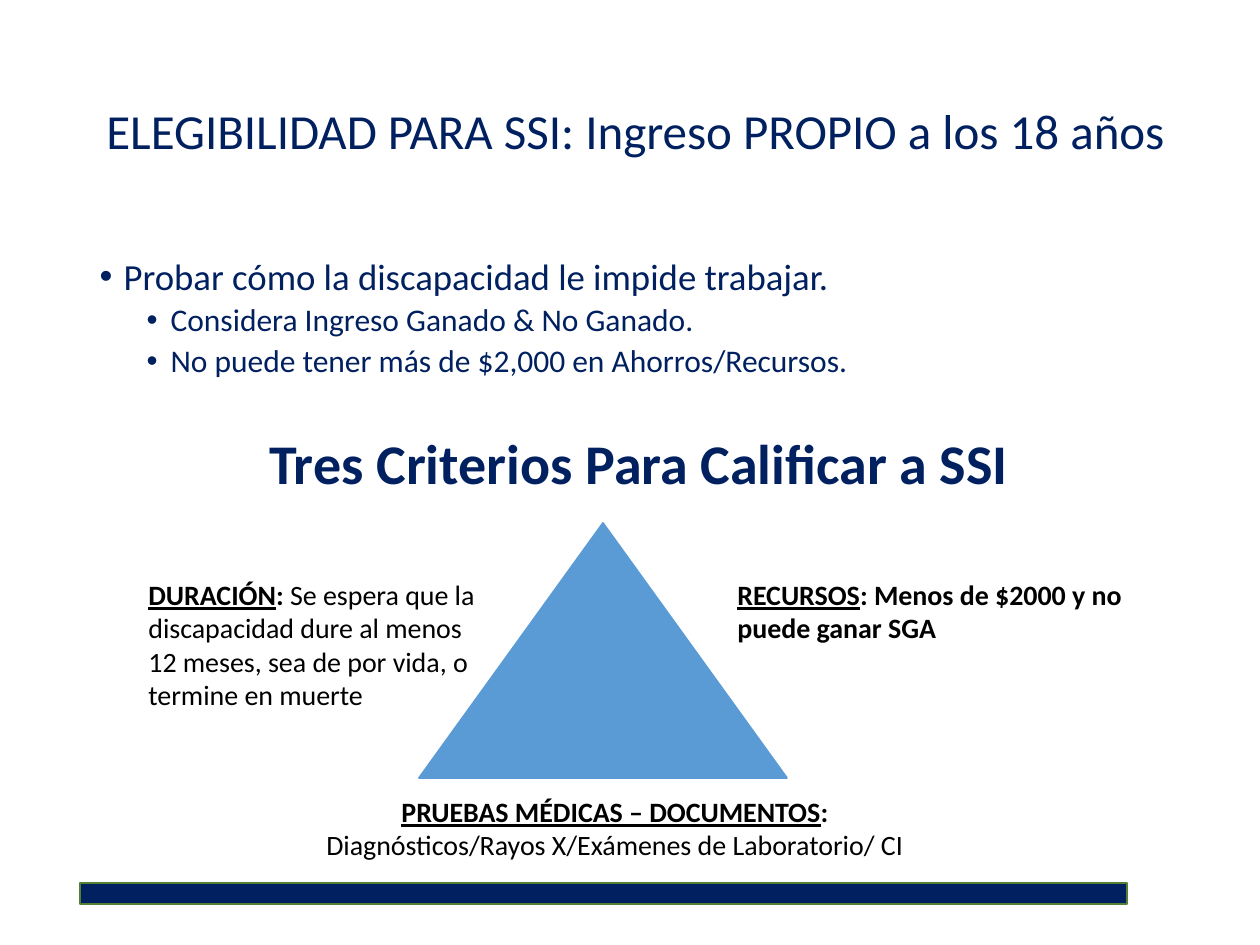
"""Build the slide on SSI eligibility at age 18."""
from lxml.etree import SubElement
from pptx import Presentation
from pptx.dml.color import RGBColor
from pptx.enum.shapes import MSO_SHAPE as SHAPE
from pptx.enum.text import MSO_ANCHOR as ANCHOR, MSO_AUTO_SIZE as AUTO, PP_ALIGN as ALIGN
from pptx.oxml.ns import qn
from pptx.util import Emu, Pt

NAVY, BLACK, BLUE, GREEN = "002060", "000000", "5B9BD5", "538035"
FONT = "Calibri"

TITLE = "ELEGIBILIDAD PARA SSI: Ingreso PROPIO a los 18 años"
TITLE_BOX = (21, 42, 1229, 183)
BODY_BOX = (87, 252, 1086, 600)
BULLETS = [
    (0, "Probar cómo la discapacidad le impide trabajar."),
    (1, "Considera Ingreso Ganado & No Ganado."),
    (1, "No puede tener más de $2,000 en Ahorros/Recursos."),
]
LEVELS = [
    {"size": 21, "before": 7.5, "left": 24},
    {"size": 18, "before": 3.8, "left": 71},
]
HANG = 24

HEADING = "Tres Criterios Para Calificar a SSI"
HEADING_BOX = (113, 430, 1040, 57)
HEADING_INDENT = 12

PLAIN, BOLD, UNDERLINED = (False, False), (True, False), (True, True)
CRITERIA = [
    ((305, 788, 620, 81), ALIGN.CENTER, [
        [("PRUEBAS MÉDICAS – DOCUMENTOS", UNDERLINED), (":", BOLD)],
        [("Diagnósticos/Rayos X/Exámenes de Laboratorio/ CI", PLAIN)],
    ]),
    ((725, 571, 428, 81), ALIGN.LEFT, [
        [("RECURSOS", UNDERLINED), (": Menos de $2000 y no puede ganar SGA", BOLD)],
    ]),
    ((136, 571, 368, 149), ALIGN.LEFT, [
        [("DURACIÓN", UNDERLINED), (": ", BOLD),
         ("Se espera que la discapacidad dure al menos 12 meses, "
          "sea de por vida, o termine en muerte", PLAIN)],
    ]),
]
SHAPES = [
    (SHAPE.ISOSCELES_TRIANGLE, (419, 523, 368, 255), BLUE, BLUE),
    (SHAPE.RECTANGLE, (80, 883, 1047, 21), NAVY, GREEN),
]


def px(n):
    return Emu(round(n * 914400 / 126))


def rgb(value):
    return RGBColor.from_string(value)


def place(sp, box):
    sp.left, sp.top, sp.width, sp.height = map(px, box)


def style(r, size, color, bold=False, underline=False):
    f = r.font
    f.name, f.size, f.bold, f.underline = FONT, Pt(size), bold, underline
    f.color.rgb = rgb(color)


def add_box(s, box):
    tf = s.shapes.add_textbox(*map(px, box)).text_frame
    tf.word_wrap = True
    return tf


def add_title(s):
    sp = s.shapes.title
    place(sp, TITLE_BOX)
    tf = sp.text_frame
    tf.text, tf.vertical_anchor, tf.auto_size = TITLE, ANCHOR.MIDDLE, AUTO.NONE
    p = tf.paragraphs[0]
    p.alignment, p.line_spacing = ALIGN.CENTER, 0.9
    style(p.runs[0], 28, NAVY)


def add_bullets(s):
    sp = s.placeholders[1]
    place(sp, BODY_BOX)
    tf = sp.text_frame
    tf.text = "\n".join(text for _, text in BULLETS)
    tf.vertical_anchor, tf.auto_size = ANCHOR.TOP, AUTO.NONE
    for p, (level, _) in zip(tf.paragraphs, BULLETS):
        look = LEVELS[level]
        p.level, p.line_spacing, p.space_before = level, 0.9, Pt(look["before"])
        pPr = p._p.get_or_add_pPr()
        pPr.set("marL", str(px(look["left"])))
        pPr.set("indent", str(px(-HANG)))
        SubElement(pPr, qn("a:buFont"), typeface="Arial")
        SubElement(pPr, qn("a:buChar"), char="•")
        style(p.runs[0], look["size"], NAVY)


def add_heading(s):
    tf = add_box(s, HEADING_BOX)
    tf.text = HEADING
    tf.margin_left, tf.margin_right = px(HEADING_INDENT), 0
    p = tf.paragraphs[0]
    p.alignment, p.line_spacing = ALIGN.CENTER, 0.9
    style(p.runs[0], 32, NAVY, bold=True)


def add_criterion(s, box, align, lines):
    tf = add_box(s, box)
    for i, line in enumerate(lines):
        p = tf.add_paragraph() if i else tf.paragraphs[0]
        p.alignment = align
        for text, (bold, underline) in line:
            r = p.add_run()
            r.text = text
            style(r, 16, BLACK, bold, underline)


def add_shape(s, kind, box, fill, line):
    sp = s.shapes.add_shape(kind, *map(px, box))
    sp.shadow.inherit = False
    sp.fill.solid()
    sp.fill.fore_color.rgb = rgb(fill)
    sp.line.color.rgb = rgb(line)
    sp.line.width = Pt(1)


def main():
    prs = Presentation()
    prs.slide_width, prs.slide_height = px(1260), px(945)
    s = prs.slides.add_slide(prs.slide_layouts[1])
    add_title(s)
    add_bullets(s)
    for item in SHAPES:
        add_shape(s, *item)
    for item in CRITERIA:
        add_criterion(s, *item)
    add_heading(s)
    prs.save("out.pptx")


if __name__ == "__main__":
    main()
